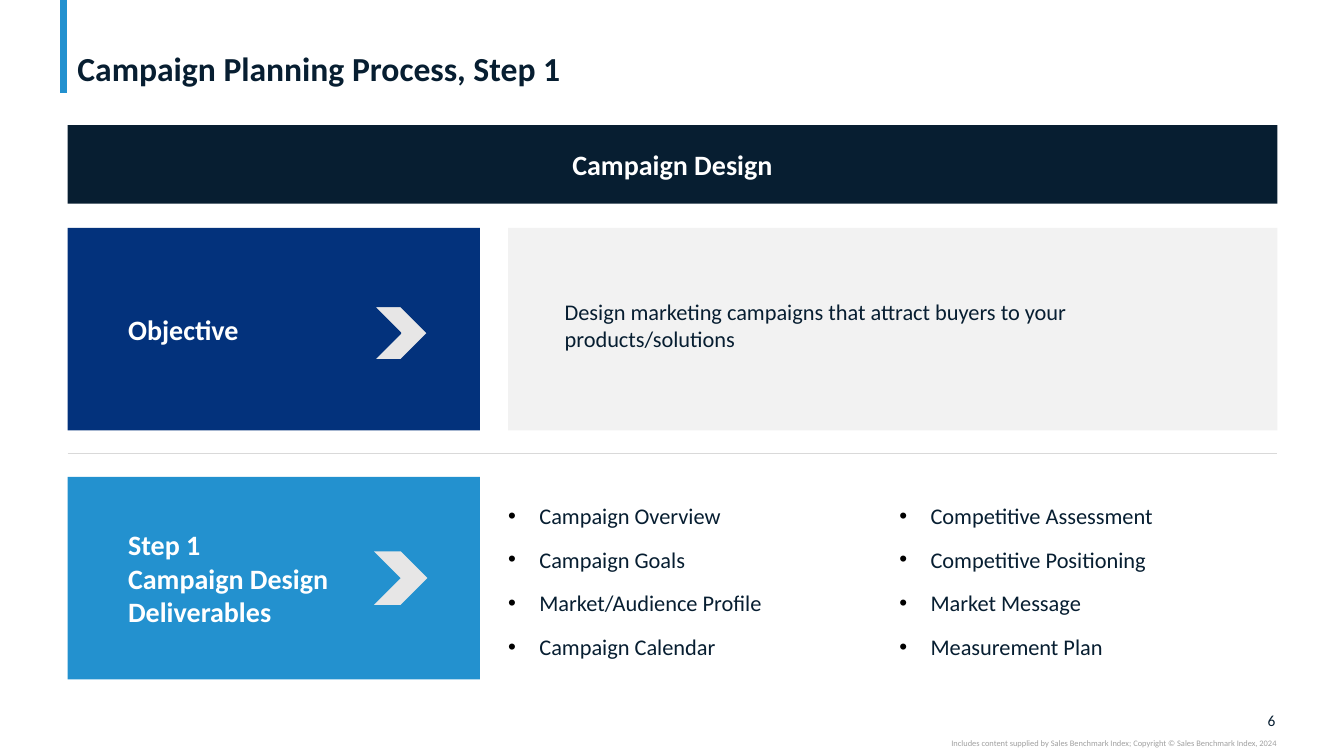
from lxml import etree
from pptx import Presentation
from pptx.dml.color import RGBColor
from pptx.enum.shapes import MSO_CONNECTOR, MSO_SHAPE
from pptx.enum.text import MSO_ANCHOR, PP_ALIGN
from pptx.oxml.ns import qn
from pptx.util import Inches, Pt

RECT, CHEVRON = MSO_SHAPE.RECTANGLE, MSO_SHAPE.CHEVRON
STRAIGHT = MSO_CONNECTOR.STRAIGHT
TOP, MIDDLE, BOTTOM = MSO_ANCHOR.TOP, MSO_ANCHOR.MIDDLE, MSO_ANCHOR.BOTTOM
START, CENTER, END = PP_ALIGN.LEFT, PP_ALIGN.CENTER, PP_ALIGN.RIGHT

HUES = {name: RGBColor.from_string(code) for name, code in {
    "ink": "071E31", "navy": "03327C", "blue": "2391CF", "white": "FFFFFF",
    "pale": "F2F2F2", "arrow": "E7E6E6", "rule": "D9D9D9", "note": "A0A0A0",
}.items()}

WIDE, HIGH = 13.33, 7.5
LEFT, SPAN = 0.67, 12
RIGHT = LEFT + SPAN
SIDE, MAIN = 4.09, 5.04
BAND, TALL, GAP = 0.78, 2.01, 0.23
HEAD = 1.24
ROW = 2.26
STEP = TALL + 2 * GAP
NEXT = ROW + STEP
INSET = LEFT + 0.6

STYLES = {
    "title": {"size": Pt(24), "bold": True, "hue": "ink"},
    "label": {"size": Pt(20), "bold": True, "hue": "white"},
    "body": {"size": Pt(16), "bold": False, "hue": "ink"},
    "page": {"size": Pt(11), "bold": False, "hue": "ink"},
    "note": {"size": Pt(6), "bold": False, "hue": "note"},
}

deck = Presentation()
deck.slide_width, deck.slide_height = Inches(WIDE), Inches(HIGH)
slide = deck.slides.add_slide(deck.slide_layouts[6])
shapes = slide.shapes


def block(kind, area, hue, edge=None):
    shape = shapes.add_shape(kind, *map(Inches, area))
    shape.shadow.inherit = False
    shape.fill.solid()
    shape.fill.fore_color.rgb = HUES[hue]
    if edge:
        shape.line.color.rgb = HUES[edge]
        shape.line.width = Pt(1)
    else:
        shape.line.fill.background()


def write(area, lines, style, anchor=TOP, align=START, pad=0, bullet=False):
    frame = shapes.add_textbox(*map(Inches, area)).text_frame
    form = {"word_wrap": True, "vertical_anchor": anchor,
            "margin_left": Inches(pad), "margin_right": Inches(pad),
            "margin_top": 0, "margin_bottom": 0}
    for key, value in form.items():
        setattr(frame, key, value)
    for index, line in enumerate(lines):
        para = frame.add_paragraph() if index else frame.paragraphs[0]
        para.alignment = align
        if style == "title":
            para.line_spacing = 0.9
        if bullet:
            para.space_after = Pt(12)
            props = para._p.get_or_add_pPr()
            props.set("marL", str(Inches(0.31)))
            props.set("indent", str(-Inches(0.31)))
            tint = etree.SubElement(props, qn("a:buClr"))
            etree.SubElement(tint, qn("a:srgbClr"), val="000000")
            etree.SubElement(props, qn("a:buFont"), typeface="Arial")
            etree.SubElement(props, qn("a:buChar"), char="•")
        run = para.add_run()
        run.text = line
        run.font.name = "Calibri"
        for key, value in STYLES[style].items():
            if key == "hue":
                run.font.color.rgb = HUES[value]
            else:
                setattr(run.font, key, value)


RULES = [
    ((0.63, 0, 0.63, 0.92), "blue", 5),
    ((LEFT, NEXT - GAP, RIGHT, NEXT - GAP), "rule", 0.5),
]
for ends, hue, weight in RULES:
    rule = shapes.add_connector(STRAIGHT, *map(Inches, ends))
    rule.line.color.rgb = HUES[hue]
    rule.line.width = Pt(weight)
    etree.SubElement(rule._element.spPr, qn("a:effectLst"))

block(RECT, (LEFT, HEAD, SPAN, BAND), "ink")
block(RECT, (MAIN, ROW, RIGHT - MAIN, TALL), "pale")

write((LEFT, 0.04, SPAN, 0.84), ["Campaign Planning Process, Step 1"],
      "title", BOTTOM, pad=0.1)
write((LEFT, HEAD, SPAN, BAND), ["Campaign Design"], "label", MIDDLE, CENTER)

CARDS = [
    (ROW, "navy", 3.04, "navy", ["Objective"]),
    (NEXT, "blue", 5.47, None, ["Step 1", "Campaign Design Deliverables"]),
]
for top, hue, tip, edge, lines in CARDS:
    block(RECT, (LEFT, top, SIDE, TALL), hue)
    block(CHEVRON, (3.71, tip, 0.53, 0.53), "arrow", edge)
    write((INSET, top, 2.55, TALL), lines, "label", MIDDLE)

write((5.6, 2.96, 6.51, 0.54),
      ["Design marketing campaigns that attract buyers to your products/solutions"],
      "body")

LISTS = [
    ["Campaign Overview", "Campaign Goals", "Market/Audience Profile",
     "Campaign Calendar"],
    ["Competitive Assessment", "Competitive Positioning", "Market Message",
     "Measurement Plan"],
]
for col, lines in enumerate(LISTS):
    write((MAIN + col * 3.88, 4.98, 3.73, 1.58), lines, "body", bullet=True)

write((12.32, 7.05, 0.33, 0.19), ["6"], "page", MIDDLE, END)
write((7.5, 7.32, 5.16, 0.1),
      ["Includes content supplied by Sales Benchmark Index; "
       "Copyright © Sales Benchmark Index, 2024"],
      "note", align=END)

deck.save("out.pptx")
